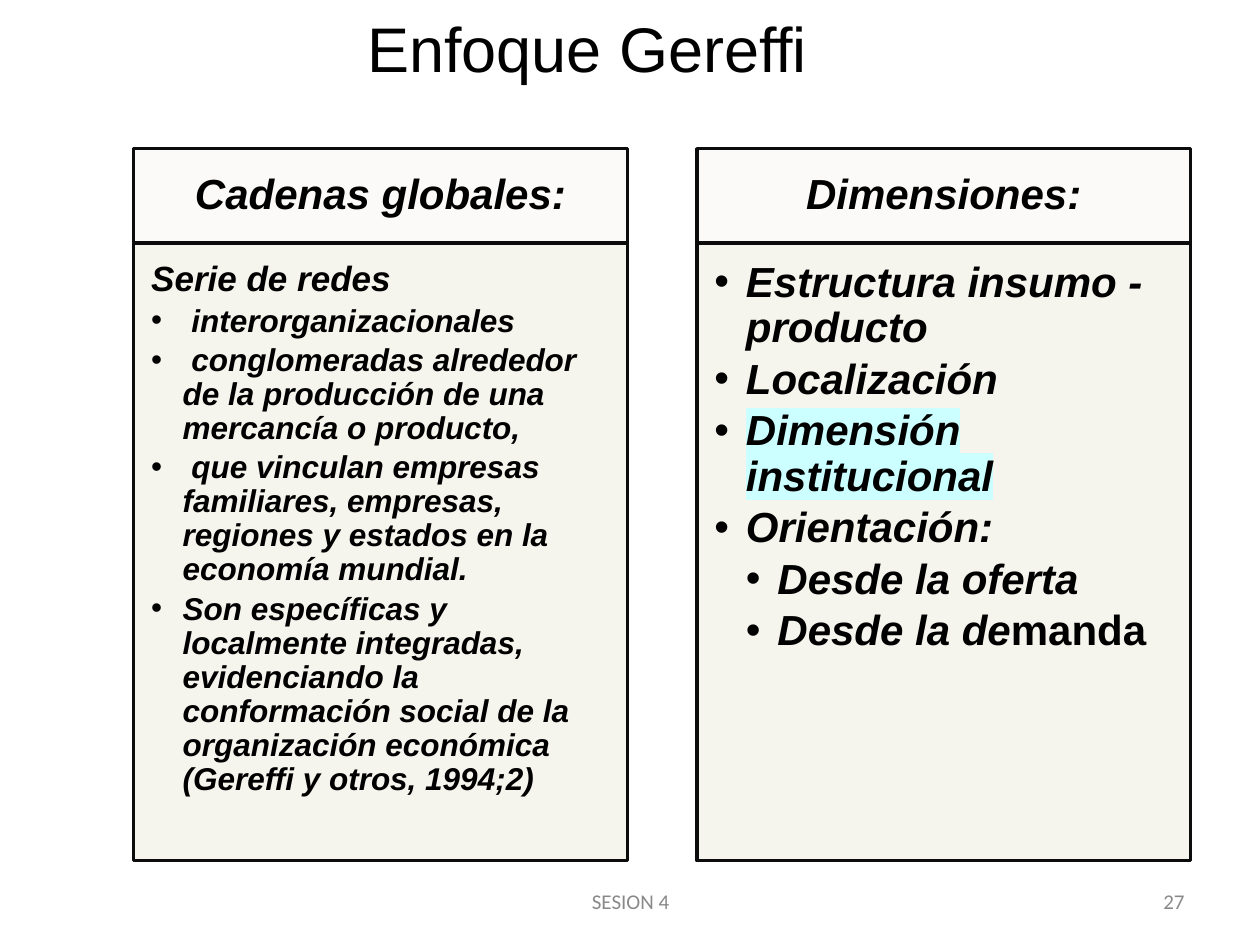
from lxml.etree import SubElement
from pptx import Presentation
from pptx.dml.color import RGBColor
from pptx.enum.shapes import MSO_SHAPE
from pptx.enum.text import MSO_ANCHOR, PP_ALIGN
from pptx.oxml import parse_xml
from pptx.oxml.ns import nsdecls, qn
from pptx.util import Inches, Pt

BLACK = RGBColor(0x00, 0x00, 0x00)
EDGE = RGBColor(0x0C, 0x0C, 0x0C)
HEAD = RGBColor(0xFB, 0xFA, 0xF8)
BODY = RGBColor(0xF4, 0xF3, 0xEC)
GRAY = RGBColor(0x89, 0x89, 0x89)
CYAN = RGBColor(0xCC, 0xFF, 0xFF)

LEFT, STEP, WIDTH = 1.06, 4.47, 3.92
TOP, SPLIT, BOTTOM = 1.18, 1.93, 6.83
INDENT = 0.25

# Each item: text, size, space before, level (0 = no bullet)
CHAINS = [
    ("Serie de redes", 20, 0, 0),
    (" interorganizacionales", 18, 3.6, 1),
    (" conglomeradas alrededor de la producción de una mercancía o producto,", 18, 3, 1),
    (" que vinculan empresas familiares, empresas, regiones y estados en la "
     "economía mundial.", 18, 3, 1),
    ("Son específicas y localmente integradas, evidenciando la conformación social "
     "de la organización económica (Gereffi y otros, 1994;2)", 18, 3, 1),
]
ASPECTS = [
    ("Estructura insumo - producto", 24, 0, 1),
    ("Localización", 24, 3.6, 1),
    ("Dimensión institucional", 24, 3.6, 1),
    ("Orientación:", 24, 3.6, 1),
    ("Desde la oferta", 24, 3.6, 2),
    ("Desde la de", 24, 3.6, 2),
]


def style(run, size, name="Arial", color=BLACK, bold=False, italic=False):
    font = run.font
    font.size, font.name = Pt(size), name
    font.bold, font.italic = bold, italic
    font.color.rgb = color


def inset(frame, left, top, right, bottom):
    frame.word_wrap = True
    frame.margin_left, frame.margin_top = Inches(left), Inches(top)
    frame.margin_right, frame.margin_bottom = Inches(right), Inches(bottom)


def add_box(slide, left, top, bottom, fill):
    box = slide.shapes.add_shape(MSO_SHAPE.RECTANGLE, Inches(left), Inches(top),
                                 Inches(WIDTH), Inches(bottom - top))
    box.shadow.inherit = False
    box.fill.solid()
    box.fill.fore_color.rgb = fill
    box.line.color.rgb = EDGE
    box.line.width = Pt(2)
    return box


def fade(shape, percent):
    """Set the opacity of a solid fill."""
    color = shape.fill._xPr.find(qn("a:solidFill"))[0]
    SubElement(color, qn("a:alpha"), val=str(percent * 1000))


def set_bullet(para, level):
    props = para._p.get_or_add_pPr()
    props.set("marL", str(Inches(INDENT * max(level, 1))))
    props.set("indent", str(-Inches(INDENT)))
    if not level:
        SubElement(props, qn("a:buNone"))
        return
    color = SubElement(props, qn("a:buClr"))
    SubElement(color, qn("a:srgbClr"), val=str(BLACK))
    SubElement(props, qn("a:buFont"), typeface="Arial")
    SubElement(props, qn("a:buChar"), char="•")


def highlight(run, color):
    mark = parse_xml(f'<a:highlight {nsdecls("a")}><a:srgbClr val="{color}"/></a:highlight>')
    run.font._element.find(qn("a:solidFill")).addnext(mark)


def add_panel(slide, left, title, items):
    """Add a heading box over a list box; return the list's paragraphs."""
    head = add_box(slide, left, TOP, SPLIT, HEAD).text_frame
    inset(head, 0.19, 0.11, 0.19, 0.11)
    head.vertical_anchor = MSO_ANCHOR.MIDDLE
    head.text = title
    para = head.paragraphs[0]
    para.alignment, para.line_spacing = PP_ALIGN.CENTER, 0.9
    style(para.runs[0], 24, bold=True, italic=True)

    box = add_box(slide, left, SPLIT, BOTTOM, BODY)
    fade(box, 90)
    body = box.text_frame
    inset(body, 0.14, 0.14, 0.19, 0.21)
    body.vertical_anchor = MSO_ANCHOR.TOP
    body.text = "\n".join(item[0] for item in items)
    for para, (_, size, gap, level) in zip(body.paragraphs, items):
        para.alignment, para.line_spacing = PP_ALIGN.LEFT, 0.9
        para.space_before = Pt(gap)
        para.level = max(level, 1)
        set_bullet(para, level)
        style(para.runs[0], size, bold=True, italic=True)
    return body.paragraphs


def add_title(slide, text):
    title = slide.shapes.title
    title.left, title.top = Inches(0.7), Inches(0)
    title.width, title.height = Inches(7.92), Inches(0.75)
    frame = title.text_frame
    frame.text = text
    frame.vertical_anchor = MSO_ANCHOR.MIDDLE
    inset(frame, 0.1, 0.05, 0.1, 0.05)
    frame.paragraphs[0].alignment = PP_ALIGN.CENTER
    style(frame.paragraphs[0].runs[0], 36)


def add_footer(slide, left, width, text, align):
    frame = slide.shapes.add_textbox(Inches(left), Inches(6.95), Inches(width),
                                     Inches(0.4)).text_frame
    frame.text = text
    frame.word_wrap = True
    frame.vertical_anchor = MSO_ANCHOR.MIDDLE
    frame.paragraphs[0].alignment = align
    style(frame.paragraphs[0].runs[0], 12, "Calibri", GRAY)


def main():
    deck = Presentation()
    deck.slide_width, deck.slide_height = Inches(10), Inches(7.5)
    slide = deck.slides.add_slide(deck.slide_layouts[5])
    add_title(slide, "Enfoque Gereffi")
    add_panel(slide, LEFT, "Cadenas globales:", CHAINS)
    paras = add_panel(slide, LEFT + STEP, "Dimensiones:", ASPECTS)
    highlight(paras[2].runs[0], CYAN)
    tail = paras[-1].add_run()
    tail.text = "manda"
    style(tail, 24, bold=True)
    add_footer(slide, 7.17, 2.33, "27", PP_ALIGN.RIGHT)
    add_footer(slide, 3.42, 3.17, "SESION 4", PP_ALIGN.CENTER)
    deck.save("out.pptx")


if __name__ == "__main__":
    main()
